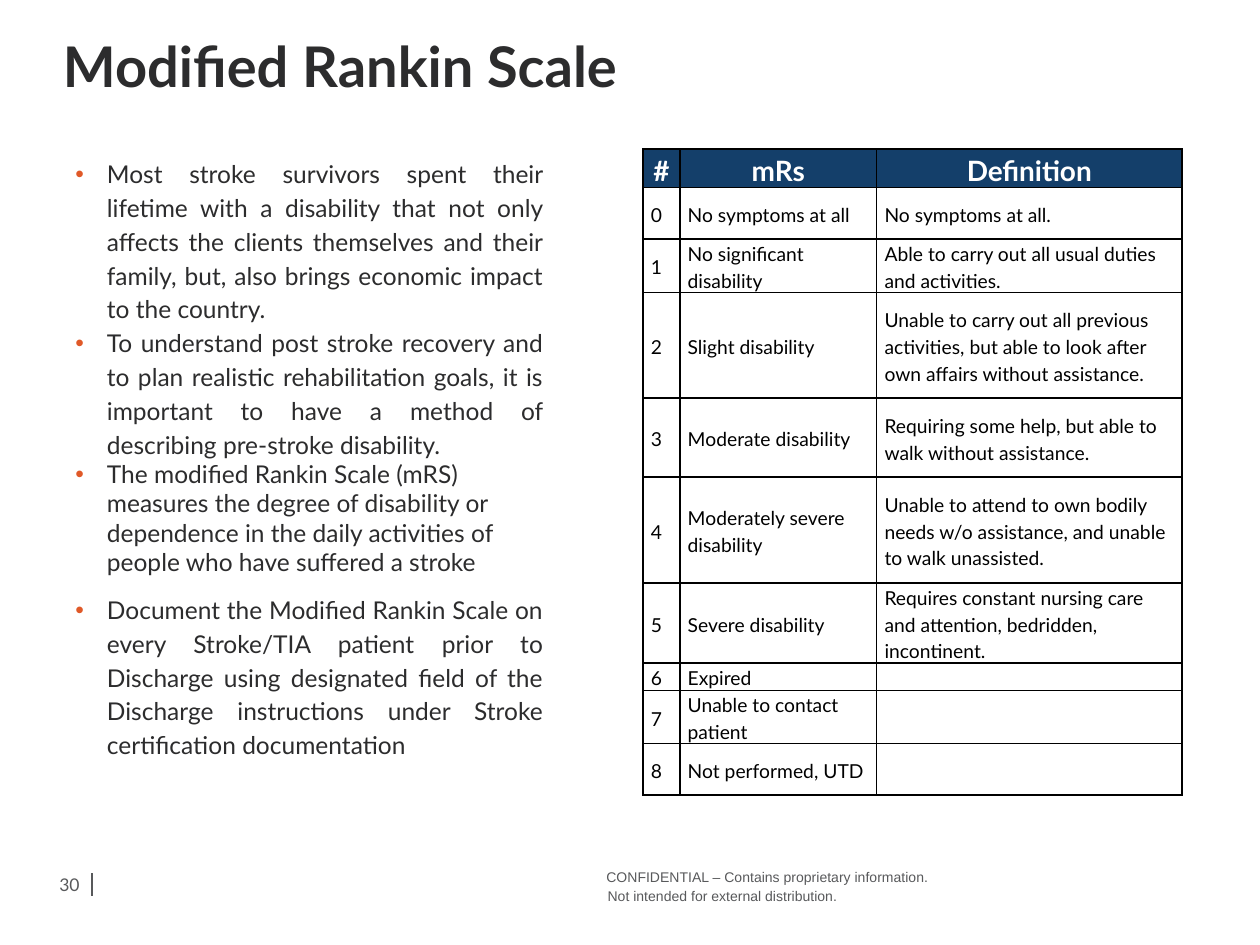
from lxml.etree import SubElement
from pptx import Presentation
from pptx.dml.color import RGBColor
from pptx.enum.shapes import MSO_CONNECTOR
from pptx.enum.text import MSO_ANCHOR as Anchor, PP_ALIGN as Align
from pptx.oxml.ns import qn
from pptx.util import Pt

COLORS = {"ink": "2C2C2D", "gray": "58595B", "bullet": "E05928", "header": "143F6A",
          "white": "FFFFFF", "black": "000000"}

# Text, whether it is justified, space after
BULLETS = [
    ("Most stroke survivors spent their lifetime with a disability that not only affects "
     "the clients themselves and their family, but, also brings economic impact to the "
     "country.", True, 0),
    ("To understand post stroke recovery and to plan realistic rehabilitation goals, it is "
     "important to have a method of describing pre-stroke disability.", True, 0),
    ("The modified Rankin Scale (mRS) measures the degree of disability or dependence in "
     "the daily activities of people who have suffered a stroke", False, 8),
    ("Document the Modified Rankin Scale on every Stroke/TIA patient prior to Discharge "
     "using designated field of the Discharge instructions under Stroke certification "
     "documentation", True, 0),
]

HEADINGS = ("#", "mRs", "Definition")
SCORES = [
    ("No symptoms at all", "No symptoms at all."),
    ("No significant disability", "Able to carry out all usual duties and activities."),
    ("Slight disability", "Unable to carry out all previous activities, but able to look "
     "after own affairs without assistance."),
    ("Moderate disability", "Requiring some help, but able to walk without assistance."),
    ("Moderately severe disability", "Unable to attend to own bodily needs w/o assistance, "
     "and unable to walk unassisted."),
    ("Severe disability", "Requires constant nursing care and attention, bedridden, "
     "incontinent."),
    ("Expired", ""),
    ("Unable to contact patient", ""),
    ("Not performed, UTD", ""),
]
COLUMN_WIDTHS = (21, 112.5, 174.5)
ROW_HEIGHTS = (22, 29.5, 30.5, 60.5, 45, 60.5, 46, 15.5, 30.5, 29.5)


def rgb(name):
    return RGBColor.from_string(COLORS[name])


def style(para, size, color, face="Lato", bold=False):
    font = para.font
    font.name, font.size, font.bold = face, Pt(size), bold
    font.color.rgb = rgb(color)


def set_insets(target, left, top, right, bottom):
    target.margin_left, target.margin_top = Pt(left), Pt(top)
    target.margin_right, target.margin_bottom = Pt(right), Pt(bottom)


def add_box(page, left, top, width, height, insets=(0, 0, 0, 0), anchor=Anchor.TOP):
    box = page.shapes.add_textbox(Pt(left), Pt(top), Pt(width), Pt(height))
    frame = box.text_frame
    frame.word_wrap = True
    frame.vertical_anchor = anchor
    set_insets(frame, *insets)
    return frame


def add_bullet(para):
    """Give the paragraph a hanging indent and a coloured bullet."""
    props = para._p.get_or_add_pPr()
    props.set("marL", str(Pt(18)))
    props.set("indent", str(Pt(-18)))
    color = SubElement(props, qn("a:buClr"))
    SubElement(color, qn("a:srgbClr"), val=COLORS["bullet"])
    SubElement(props, qn("a:buFont"), typeface="Arial")
    SubElement(props, qn("a:buChar"), char="•")


def add_bullet_list(page):
    frame = add_box(page, 36, 85, 281.5, 381, insets=(7.2, 3.6, 7.2, 3.6))
    for index, (text, justified, space_after) in enumerate(BULLETS):
        para = frame.add_paragraph() if index else frame.paragraphs[0]
        para.text = text
        add_bullet(para)
        para.alignment = Align.JUSTIFY if justified else Align.LEFT
        para.line_spacing = 1.15 if justified else 1.0
        para.space_after = Pt(space_after)
        style(para, 14, "ink")


def add_borders(cell):
    props = cell._tc.get_or_add_tcPr()
    for position, side in enumerate(("lnL", "lnR", "lnT", "lnB")):
        line = props.makeelement(qn(f"a:{side}"), {"w": str(Pt(1))})
        fill = SubElement(line, qn("a:solidFill"))
        SubElement(fill, qn("a:srgbClr"), val=COLORS["black"])
        props.insert(position, line)


def fill_cell(cell, text, heading):
    size = 16 if heading else 11
    set_insets(cell, 4.5, 0, 4.5, 0)
    cell.vertical_anchor = Anchor.TOP if heading else Anchor.MIDDLE
    if heading:
        cell.fill.solid()
        cell.fill.fore_color.rgb = rgb("header")
    else:
        cell.fill.background()
    add_borders(cell)
    para = cell.text_frame.paragraphs[0]
    para.alignment = Align.CENTER if heading else Align.LEFT
    para.line_spacing = 1.15
    style(para, size, "white" if heading else "black", bold=heading)
    if text:
        para.text = text
    else:
        SubElement(para._p, qn("a:endParaRPr"), sz=str(size * 100))


def add_score_table(page):
    rows = [HEADINGS] + [(str(score), *texts) for score, texts in enumerate(SCORES)]
    table = page.shapes.add_table(len(rows), len(HEADINGS), Pt(367.5), Pt(85),
                                  Pt(sum(COLUMN_WIDTHS)), Pt(sum(ROW_HEIGHTS))).table
    table.horz_banding = False
    for column, width in zip(table.columns, COLUMN_WIDTHS):
        column.width = Pt(width)
    for row_index, (texts, height) in enumerate(zip(rows, ROW_HEIGHTS)):
        table.rows[row_index].height = Pt(height)
        for column_index, text in enumerate(texts):
            fill_cell(table.cell(row_index, column_index), text, heading=row_index == 0)


def add_title(page):
    para = add_box(page, 36, 18, 648, 52.5).paragraphs[0]
    para.text = "Modified Rankin Scale"
    style(para, 32, "ink", bold=True)


def add_footer(page):
    rule = page.shapes.add_connector(MSO_CONNECTOR.STRAIGHT,
                                     Pt(52.5), Pt(499), Pt(52.5), Pt(512))
    rule.line.color.rgb = rgb("gray")
    rule.line.width = Pt(0.75)
    SubElement(rule._element.spPr, qn("a:effectLst"))

    number = add_box(page, 29, 495.5, 19.5, 19.5, (0, 3.6, 3, 3.6), Anchor.MIDDLE)
    number.word_wrap = False
    para = number.paragraphs[0]
    para.text = "30"
    para.alignment = Align.RIGHT
    style(para, 10, "gray")

    para = add_box(page, 346.5, 493, 241, 26, anchor=Anchor.MIDDLE).paragraphs[0]
    para.text = ("CONFIDENTIAL – Contains proprietary information. \v"
                 "Not intended for external distribution.")
    props = para._p.get_or_add_pPr()
    props.set("marL", str(Pt(0.75)))
    props.set("indent", str(Pt(-0.75)))
    para.line_spacing = 1.1
    style(para, 8, "gray", face="Arial")


def main():
    deck = Presentation()
    deck.slide_width, deck.slide_height = Pt(720), Pt(540)
    page = deck.slides.add_slide(deck.slide_layouts[6])
    add_footer(page)
    add_bullet_list(page)
    add_title(page)
    add_score_table(page)
    deck.save("out.pptx")


if __name__ == "__main__":
    main()
